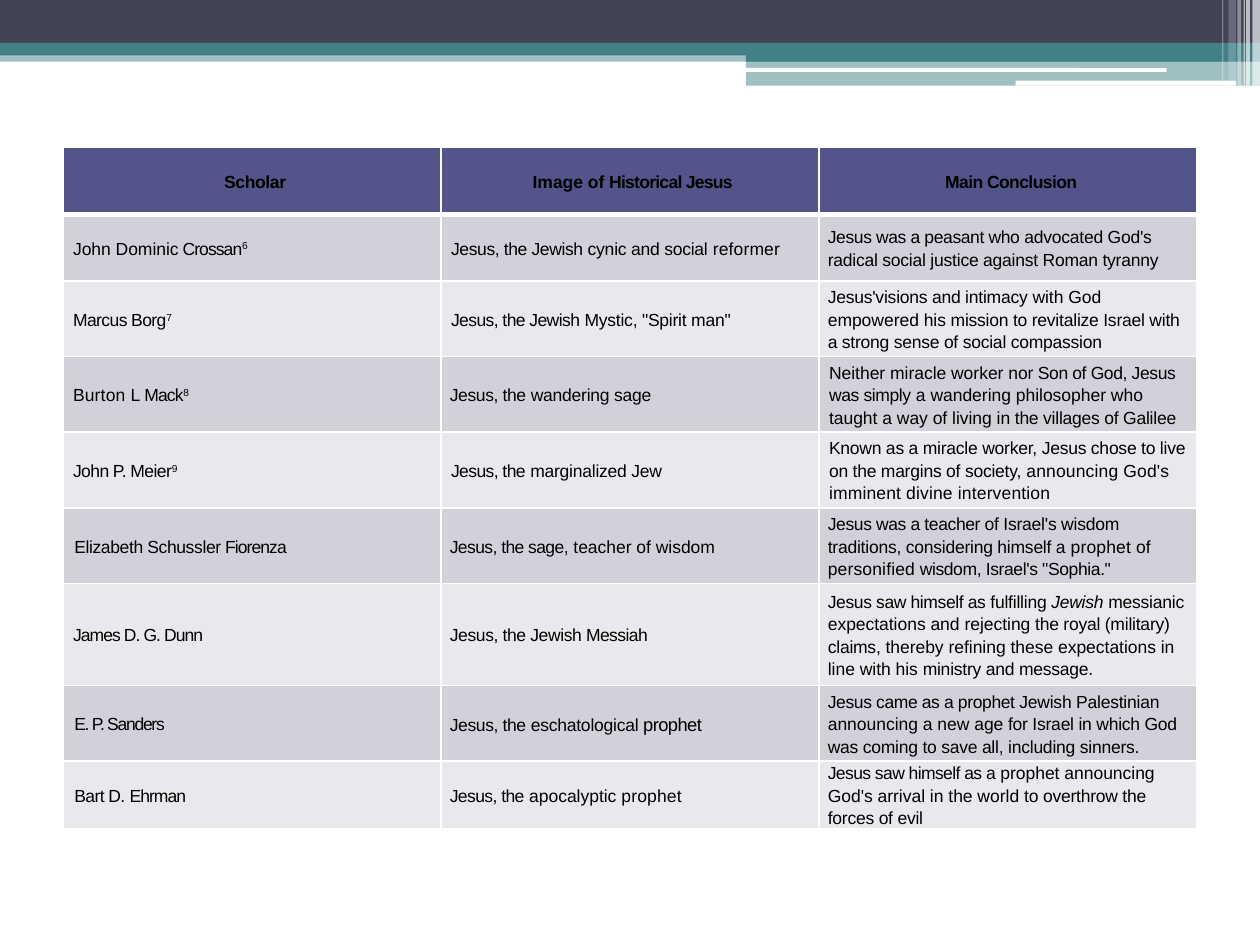
"""Build a slide with a banner and a table of scholars on the historical Jesus."""
import pptx
import pptx.dml.color
import pptx.enum.shapes
import pptx.enum.text
import pptx.oxml
import pptx.oxml.ns
import pptx.util
from pptx.util import Inches

HUES = {"navy": "424456", "teal": "438086", "white": "FFFFFF", "black": "000000",
        "head": "53548A", "odd": "D1D1DA", "even": "E9E9ED"}

BARS = [
    (0, 0.4, 10, 0.09, "teal", 50),
    (0, 0, 10, 0.34, "navy", 100),
    (0, 0.34, 10, 0.1, "teal", 100),
    (5.92, 0.39, 4.08, 0.1, "teal", 100),
    (5.92, 0.48, 4.08, 0.2, "teal", 50),
]
PILLS = [(5.91, 0.54, 3.35, 0.03), (8.06, 0.64, 1.75, 0.04)]
STRIPES = [
    (9.94, 0.06, 0.68, 65), (9.89, 0.03, 0.68, 65), (9.87, 0.01, 0.68, 60),
    (9.82, 0.03, 0.68, 40), (9.75, 0.06, 0.64, 20), (9.7, 0.01, 0.64, 30),
]

HIGHS = [0.53, 0.53, 0.6, 0.6, 0.6, 0.6, 0.81, 0.6, 0.53]
DENTS = [(0.05, 0.04, 0.05), (0.05, 0.05, 0.04), (0.05, 0.05, 0.04),
         (0.05, 0.04, 0.05), (0.05, 0.05, 0.05), (0.06, 0.04, 0.04),
         (0.05, 0.04, 0.04), (0.06, 0.04, 0.04), (0.06, 0.04, 0.04)]
ROWS = [
    [[("Scholar", -0.2)],
     [("Image of ", 0), ("Historical Jesus", -0.4)],
     [("Main Conclusion", -0.3)]],
    [[("John Dominic", 0), (" Crossan", -0.5), ("6", -0.5, "super")],
     [("Jesus, the Jewish", -0.2), (" cynic and social", -0.1), (" reformer", 0.1)],
     [("Jesus was a peasant who", -0.2),
      (" advocated God's radical social justice against Roman tyranny", -0.1)]],
    [[("Marcus Borg", -0.3), ("7", -0.3, "super")],
     [("Jesus, the Jewish", -0.3), (" Mystic, \"Spirit man\"", -0.1)],
     [("Jesus'visions and intimacy", -0.1), (" with God empowered his", 0),
      (" mission to revitalize Israel with a strong sense of social compassion", -0.1)]],
    [[("Burton L", 0.1), (" Mack", -0.5), ("8", -0.5, "super")],
     [("Jesus, the", -0.2), (" wandering sage", -0.1)],
     [("Neither miracle worker nor", 0), (" Son of God, Jesus was simply", -0.2),
      (" a wandering philosopher who taught a way of living in", 0),
      (" the villages of Galilee", -0.1)]],
    [[("John P. Meier", -0.3), ("9", -0.3, "super")],
     [("Jesus, the", -0.3), (" marginalized Jew", -0.1)],
     [("Known as a miracle worker, Jesus chose to live on the margins of society,", -0.1),
      (" announcing God's imminent divine intervention", 0.1)]],
    [[("Elizabeth Schussler", -0.2), (" Fiorenza", -0.5)],
     [("Jesus, the sage,", -0.3), (" teacher of wisdom", 0)],
     [("Jesus was a teacher of", -0.2),
      (" Israel's wisdom traditions, considering himself a", -0.1),
      (" prophet of personified", 0.1), (" wisdom, Israel's \"Sophia.\"", -0.2)]],
    [[("James D. G. Dunn", -0.5)],
     [("Jesus, the Jewish", -0.2), (" Messiah", -0.3)],
     [("Jesus saw himself as ", -0.2), ("fulfilling ", -0.1), ("Jewish ", -0.1, "italic"),
      ("messianic ", -0.1), ("expectations and rejecting ", 0),
      ("the royal (military) claims, ", -0.1),
      ("thereby refining these expectations in line with his ", 0),
      ("ministry and message.", -0.1)]],
    [[("E. P. Sanders", -0.7)],
     [("Jesus, the", -0.2), (" eschatological", -0.1), (" prophet", -0.3, "large")],
     [("Jesus came as a prophet ", -0.2), ("Jewish Palestinian ", -0.1),
      ("announcing a new age ", 0),
      ("for Israel in which God was coming to save all, including sinners.", -0.1)]],
    [[("Bart D. ", -0.3), ("Ehrman", -0.5)],
     [("Jesus, the", -0.3), (" apocalyptic", 0), (" prophet", 0.1)],
     [("Jesus saw himself as a", -0.3),
      (" prophet announcing God's arrival in the world to", 0),
      (" overthrow the forces of evil", -0.1)]],
]


class Deck:
    """Hold the style and the current slide."""

    def __init__(self):
        """Start a file with one blank slide."""
        self.font, self.size = "Arial", 10
        self.file = pptx.Presentation()
        self.file.slide_width, self.file.slide_height = Inches(10), Inches(7.5)
        self.slide = self.file.slides.add_slide(self.file.slide_layouts[6])

    def paint(self, fill, hue, alpha=100):
        """Set a solid fill with a given opacity."""
        fill.solid()
        fill.fore_color.rgb = pptx.dml.color.RGBColor.from_string(HUES[hue])
        if alpha < 100:
            color = fill._xPr.find(".//" + pptx.oxml.ns.qn("a:srgbClr"))
            node = pptx.oxml.parse_xml(
                f'<a:alpha {pptx.oxml.ns.nsdecls("a")} val="{alpha * 1000}"/>')
            color.append(node)

    def bar(self, left, top, width, height, hue, alpha=100, kind="RECTANGLE"):
        """Add a plain filled bar."""
        shape = self.slide.shapes.add_shape(
            pptx.enum.shapes.MSO_SHAPE[kind],
            Inches(left), Inches(top), Inches(width), Inches(height))
        shape.shadow.inherit = False
        shape.line.fill.background()
        self.paint(shape.fill, hue, alpha)

    def edge(self, cell, side, width):
        """Draw one white border of a cell."""
        cell._tc.get_or_add_tcPr().append(pptx.oxml.parse_xml(
            f'<a:ln{side} {pptx.oxml.ns.nsdecls("a")} w="{width * 12700}">'
            f'<a:solidFill><a:srgbClr val="{HUES["white"]}"/></a:solidFill></a:ln{side}>'))

    def run(self, para, text, gap, style="", bold=False):
        """Add one run with its letter spacing."""
        run = para.add_run()
        run.text = text
        font = run.font
        font.name, font.bold, font.italic = self.font, bold, style == "italic"
        font.size = pptx.util.Pt(10.5 if style == "large" else self.size)
        font.color.rgb = pptx.dml.color.RGBColor.from_string(HUES["black"])
        props = run._r.get_or_add_rPr()
        props.set("spc", str(round(gap * 100)))
        if style == "super":
            props.set("baseline", "30000")

    def cell(self, cell, runs, dent, row):
        """Fill one cell with borders, colour and text."""
        for side in "LRTB":
            thick = (row, side) in ((0, "B"), (1, "T"))
            self.edge(cell, side, 3 if thick else 1)
        self.paint(cell.fill, "head" if row == 0 else "odd" if row % 2 else "even")
        cell.vertical_anchor = pptx.enum.text.MSO_ANCHOR.MIDDLE
        cell.margin_left = cell.margin_right = Inches(0.03)
        cell.margin_top = cell.margin_bottom = 0
        para = cell.text_frame.paragraphs[0]
        align = pptx.enum.text.PP_ALIGN
        para.alignment = align.LEFT if row else align.CENTER
        para.line_spacing = 1.15
        para.space_before, para.space_after = pptx.util.Pt(6), pptx.util.Pt(10)
        props = para._p.get_or_add_pPr()
        props.set("marL", str(Inches(dent)))
        props.set("indent", "0")
        for item in runs:
            self.run(para, *item, bold=row == 0)

    def table(self, left, top, width, rows, highs, dents):
        """Add a table with equal columns."""
        count = len(rows[0])
        grid = self.slide.shapes.add_table(
            len(rows), count, Inches(left), Inches(top),
            Inches(width), Inches(sum(highs))).table
        for col in grid.columns:
            col.width = Inches(width / count)
        for row, (cells, high) in enumerate(zip(rows, highs)):
            grid.rows[row].height = Inches(high)
            for col, runs in enumerate(cells):
                self.cell(grid.cell(row, col), runs, dents[row][col], row)


def main():
    """Build and save the slide."""
    deck = Deck()
    for bar in BARS:
        deck.bar(*bar)
    for pill in PILLS:
        deck.bar(*pill, "white", kind="ROUNDED_RECTANGLE")
    for left, width, height, alpha in STRIPES:
        deck.bar(left, 0, width, height, "white", alpha)
    deck.table(0.5, 1.17, 9, ROWS, HIGHS, DENTS)
    deck.file.save("out.pptx")


if __name__ == "__main__":
    main()
